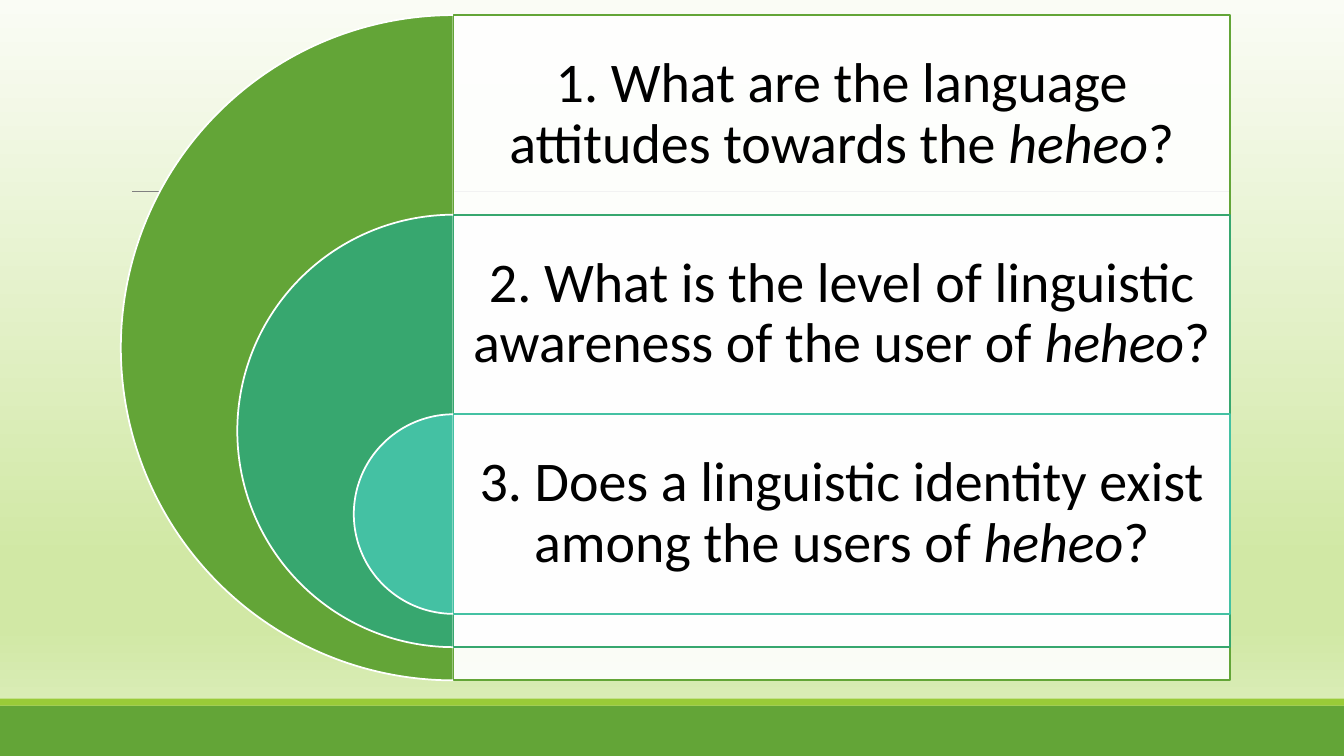
"""Build the slide with three nested research questions."""
from copy import deepcopy

from lxml import etree
from pptx import Presentation
from pptx.dml.color import RGBColor
from pptx.enum.shapes import MSO_CONNECTOR, MSO_SHAPE
from pptx.enum.text import MSO_ANCHOR, PP_ALIGN
from pptx.oxml.ns import qn
from pptx.util import Inches, Pt

RECTANGLE, PIE = MSO_SHAPE.RECTANGLE, MSO_SHAPE.PIE
STRAIGHT = MSO_CONNECTOR.STRAIGHT
MIDDLE, CENTER = MSO_ANCHOR.MIDDLE, PP_ALIGN.CENTER

WHITE = RGBColor(0xFF, 0xFF, 0xFF)
BLACK = RGBColor(0x00, 0x00, 0x00)
GRAY = RGBColor(0x80, 0x80, 0x80)
GREEN = RGBColor(0x63, 0xA5, 0x37)
LIME = RGBColor(0x99, 0xCB, 0x38)
EMERALD = RGBColor(0x37, 0xA7, 0x6F)
TURQUOISE = RGBColor(0x44, 0xC1, 0xA3)
BACKDROP = [
    (0, RGBColor(0xFA, 0xFC, 0xF5)),
    (0.74, RGBColor(0xD1, 0xE8, 0xA5)),
    (0.83, RGBColor(0xD1, 0xE8, 0xA5)),
    (1, RGBColor(0xE0, 0xEF, 0xC3)),
]

QUESTIONS = [
    (GREEN, "1. What are the language attitudes towards the "),
    (EMERALD, "2. What is the level of linguistic awareness of the user of "),
    (TURQUOISE, "3. Does a linguistic identity exist among the users of "),
]
TOP, ROW, NESTING = 2, 26.4, 0.35
PANEL_LEFT, PANEL_WIDTH = 33.75, 57.75


class SlideBuilder:
    """Draw styled elements placed in percent of the slide's size."""

    font, size, outline, inset = "Calibri", 40, 1.25, 0.17

    def __init__(self, deck):
        """Add a blank page to the deck."""
        self.deck = deck
        self.page = deck.slides.add_slide(deck.slide_layouts[6])

    def across(self, share):
        """Turn a percentage of the slide's width into a length."""
        return round(self.deck.slide_width * share / 100)

    def down(self, share):
        """Turn a percentage of the slide's height into a length."""
        return round(self.deck.slide_height * share / 100)

    def frame(self, left, top, width, height):
        """Return the four lengths of a frame."""
        return self.across(left), self.down(top), self.across(width), self.down(height)

    def background(self, stops):
        """Fill the page with a gradient running downwards."""
        fill = self.page.background.fill
        fill.gradient()
        fill.gradient_angle = 270
        stop_list = next(self.page.element.iter(qn("a:gsLst")))
        while len(stop_list) < len(stops):
            stop_list.append(deepcopy(stop_list[0]))
        for stop, (position, color) in zip(fill.gradient_stops, stops):
            stop.position = position
            stop.color.rgb = color

    def shape(self, kind, frame, fill, line=None):
        """Add a flat preset shape."""
        shape = self.page.shapes.add_shape(kind, *frame)
        shape.shadow.inherit = False
        shape.fill.solid()
        shape.fill.fore_color.rgb = fill
        if line is None:
            shape.line.fill.background()
        else:
            shape.line.color.rgb = line
            shape.line.width = Pt(self.outline)
        return shape

    def half_disc(self, center, top, height, color):
        """Add the left half of a disc."""
        diameter = self.down(height)
        frame = (self.across(center) - diameter // 2, self.down(top), diameter, diameter)
        disc = self.shape(PIE, frame, color, WHITE)
        disc.adjustments[0] = 54
        disc.adjustments[1] = 162

    def panel(self, frame, color):
        """Add a slightly transparent white panel."""
        panel = self.shape(RECTANGLE, frame, WHITE, color)
        white = next(panel.element.spPr.iter(qn("a:srgbClr")))
        etree.SubElement(white, qn("a:alpha"), val="90000")

    def rule(self, left, right, top):
        """Add a thin horizontal line."""
        height = self.down(top)
        rule = self.page.shapes.add_connector(
            STRAIGHT, self.across(left), height, self.across(right), height)
        rule.line.color.rgb = GRAY
        rule.line.width = Pt(0.5)
        etree.SubElement(rule.element.spPr, qn("a:effectLst"))

    def text(self, frame, spans):
        """Add a centred paragraph made of (words, italic) spans."""
        box = self.page.shapes.add_textbox(*frame).text_frame
        box.word_wrap = True
        box.vertical_anchor = MIDDLE
        box.margin_left = box.margin_right = Inches(self.inset)
        box.margin_top = box.margin_bottom = Inches(self.inset)
        para = box.paragraphs[0]
        para.alignment = CENTER
        para.line_spacing = 0.9
        for words, italic in spans:
            span = para.add_run()
            span.text = words
            span.font.name = self.font
            span.font.size = Pt(self.size)
            span.font.italic = italic
            span.font.color.rgb = BLACK


def main():
    """Build and save the deck."""
    deck = Presentation()
    deck.slide_width, deck.slide_height = Inches(13.33), Inches(7.5)
    builder = SlideBuilder(deck)
    builder.background(BACKDROP)
    builder.shape(RECTANGLE, builder.frame(0, 93.33, 100, 6.67), GREEN)
    builder.shape(RECTANGLE, builder.frame(0, 92.4, 100, 0.93), LIME)
    builder.rule(9.83, 91.58, 25.33)
    for level, (color, question) in enumerate(QUESTIONS):
        top = TOP + level * ROW
        height = ROW / (1 - 2 * NESTING) * (1 - level * NESTING)
        builder.half_disc(PANEL_LEFT, top, height, color)
        builder.panel(builder.frame(PANEL_LEFT, top, PANEL_WIDTH, height), color)
        builder.text(builder.frame(PANEL_LEFT, top, PANEL_WIDTH, ROW),
                     [(question, False), ("heheo", True), ("?", False)])
    deck.save("out.pptx")


if __name__ == "__main__":
    main()
